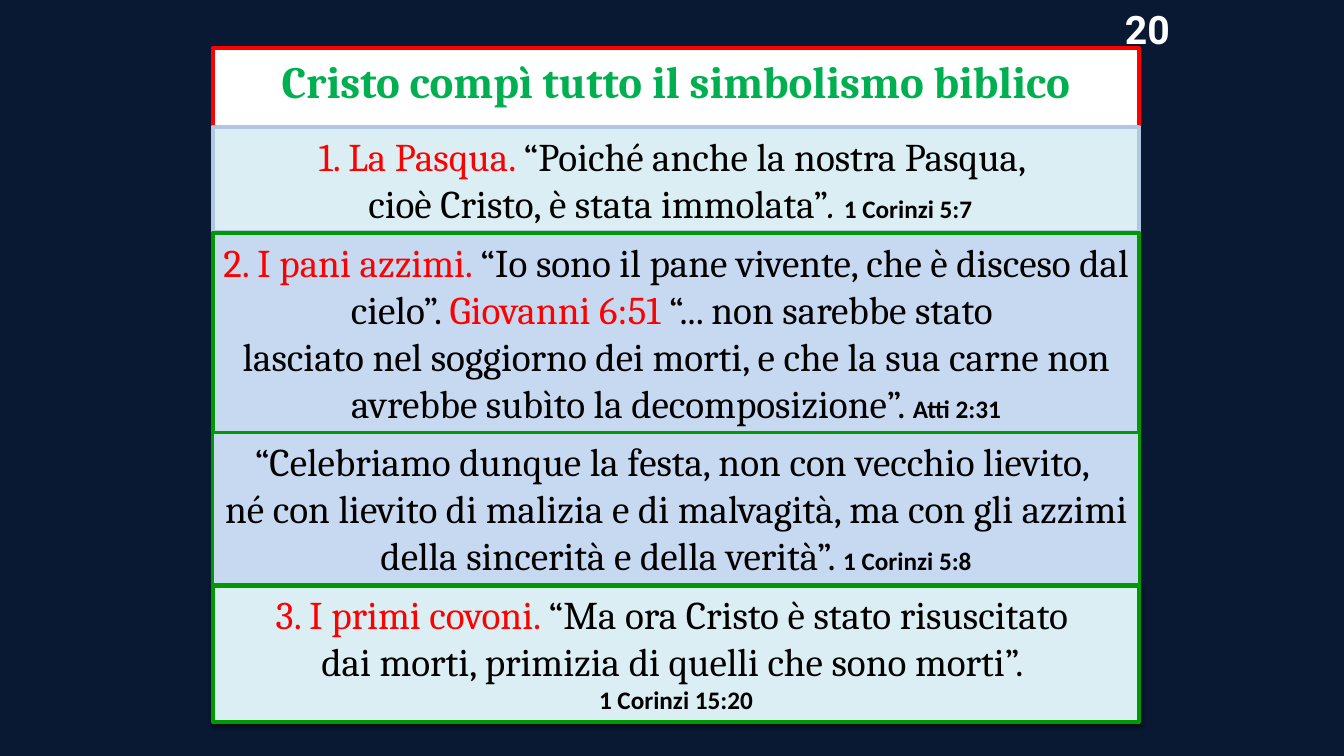
"""Builds the slide on how Christ fulfilled the biblical symbols."""
from lxml import etree
from pptx import Presentation
from pptx.dml.color import RGBColor
from pptx.enum import shapes, text
from pptx.oxml import ns
from pptx.util import Inches, Pt

LEFT, WIDTH = 2.11, 9.19
TITLE = "Cristo compì tutto il simbolismo biblico"
PAGE_NUMBER = "20"
RED, BLACK, GREEN = "FF0000", "000000", "009900"
PALE, BLUE = "DBEEF4", "C6D9F1"

HEAD = {"size": 28, "font": "Cambria", "color": RED}
BODY = {"size": 28, "font": "Cambria", "color": BLACK}
ITALIC = {**BODY, "italic": True}
VERSE = {"size": 18, "font": "Calibri", "color": BLACK, "bold": True}

PANELS = [
    {"top": 1.26, "height": 1.04, "fill": PALE, "line": "B0C6E1", "weight": 3, "paras": [
        [("1. La Pasqua. ", HEAD), ("“Poiché anche la nostra Pasqua, ", BODY)],
        [("cioè Cristo, è stata immolata”", BODY), (". ", ITALIC), ("1 Corinzi 5:7  ", VERSE)]]},
    {"top": 2.31, "height": 1.99, "fill": BLUE, "line": GREEN, "weight": 3, "paras": [
        [("2. I pani azzimi. ", HEAD),
         ("“Io sono il pane vivente, che è disceso dal cielo”. ", BODY),
         ("Giovanni 6:51 ", HEAD), ("“... non sarebbe stato ", BODY)],
        [("lasciato nel soggiorno dei morti, e che la sua carne non "
          "avrebbe subìto la decomposizione”. ", BODY), ("Atti 2:31", VERSE)]]},
    {"top": 5.81, "height": 1.35, "fill": PALE, "line": GREEN, "weight": 3, "shadow": True, "paras": [
        [("3. I primi covoni. ", HEAD), ("“Ma ora Cristo è stato risuscitato ", BODY)],
        [("dai morti, primizia di quelli che sono morti”. ", BODY)],
        [("1 Corinzi 15:20", VERSE)]]},
    {"top": 4.29, "height": 1.51, "fill": BLUE, "line": GREEN, "weight": 2, "paras": [
        [("“Celebriamo dunque la festa, non con vecchio lievito, ", BODY)],
        [("né con lievito di malizia e di malvagità, ma con gli azzimi "
          "della sincerità e della verità”. ", BODY), ("1 Corinzi 5:8", VERSE)]]},
]


def rgb(color):
    return RGBColor.from_string(color)


def add_span(para, words, size, font, color, bold=False, italic=False):
    para.alignment = text.PP_ALIGN.CENTER
    span = para.add_run()
    span.text = words
    span.font.size = Pt(size)
    span.font.name = font
    span.font.color.rgb = rgb(color)
    span.font.bold = bold
    span.font.italic = italic


def write(box, paras, wrap=True):
    frame = box.text_frame
    frame.word_wrap = wrap
    frame.auto_size = text.MSO_AUTO_SIZE.SHAPE_TO_FIT_TEXT
    frame.vertical_anchor = text.MSO_ANCHOR.TOP
    for index, spans in enumerate(paras):
        para = frame.add_paragraph() if index else frame.paragraphs[0]
        for words, style in spans:
            add_span(para, words, **style)


def paint(box, fill, line, weight):
    box.fill.solid()
    box.fill.fore_color.rgb = rgb(fill)
    box.line.color.rgb = rgb(line)
    box.line.width = Pt(weight)


def add_shadow(box):
    effects = box._element.spPr.find(ns.qn("a:effectLst"))
    shadow = etree.SubElement(effects, ns.qn("a:outerShdw"), blurRad=str(Pt(3.1)),
                              dist=str(Pt(1.6)), dir="5400000", rotWithShape="0")
    color = etree.SubElement(shadow, ns.qn("a:srgbClr"), val=BLACK)
    etree.SubElement(color, ns.qn("a:alpha"), val="38000")


def add_panel(page, panel):
    box = page.shapes.add_shape(
        shapes.MSO_SHAPE.RECTANGLE, Inches(LEFT), Inches(panel["top"]),
        Inches(WIDTH), Inches(panel["height"]))
    box.shadow.inherit = False
    paint(box, panel["fill"], panel["line"], panel["weight"])
    if panel.get("shadow"):
        add_shadow(box)
    write(box, panel["paras"])


def main():
    deck = Presentation()
    deck.slide_width, deck.slide_height = Inches(13.33), Inches(7.5)
    page = deck.slides.add_slide(deck.slide_layouts[5])
    page.background.fill.solid()
    page.background.fill.fore_color.rgb = rgb("091933")

    title = page.shapes.title
    title.left, title.top = Inches(LEFT), Inches(0.48)
    title.width, title.height = Inches(WIDTH), Inches(0.64)
    paint(title, "FFFFFF", RED, 3)
    write(title, [[(TITLE, {"size": 32, "font": "Cambria", "color": "00B050", "bold": True})]])

    for panel in PANELS:
        add_panel(page, panel)

    number = page.shapes.add_textbox(Inches(11.03), 0, Inches(0.7), Inches(0.57))
    write(number, [[(PAGE_NUMBER, {"size": 28, "font": "Roboto", "color": "FFFFFF", "bold": True})]],
          wrap=False)
    deck.save("out.pptx")


if __name__ == "__main__":
    main()
